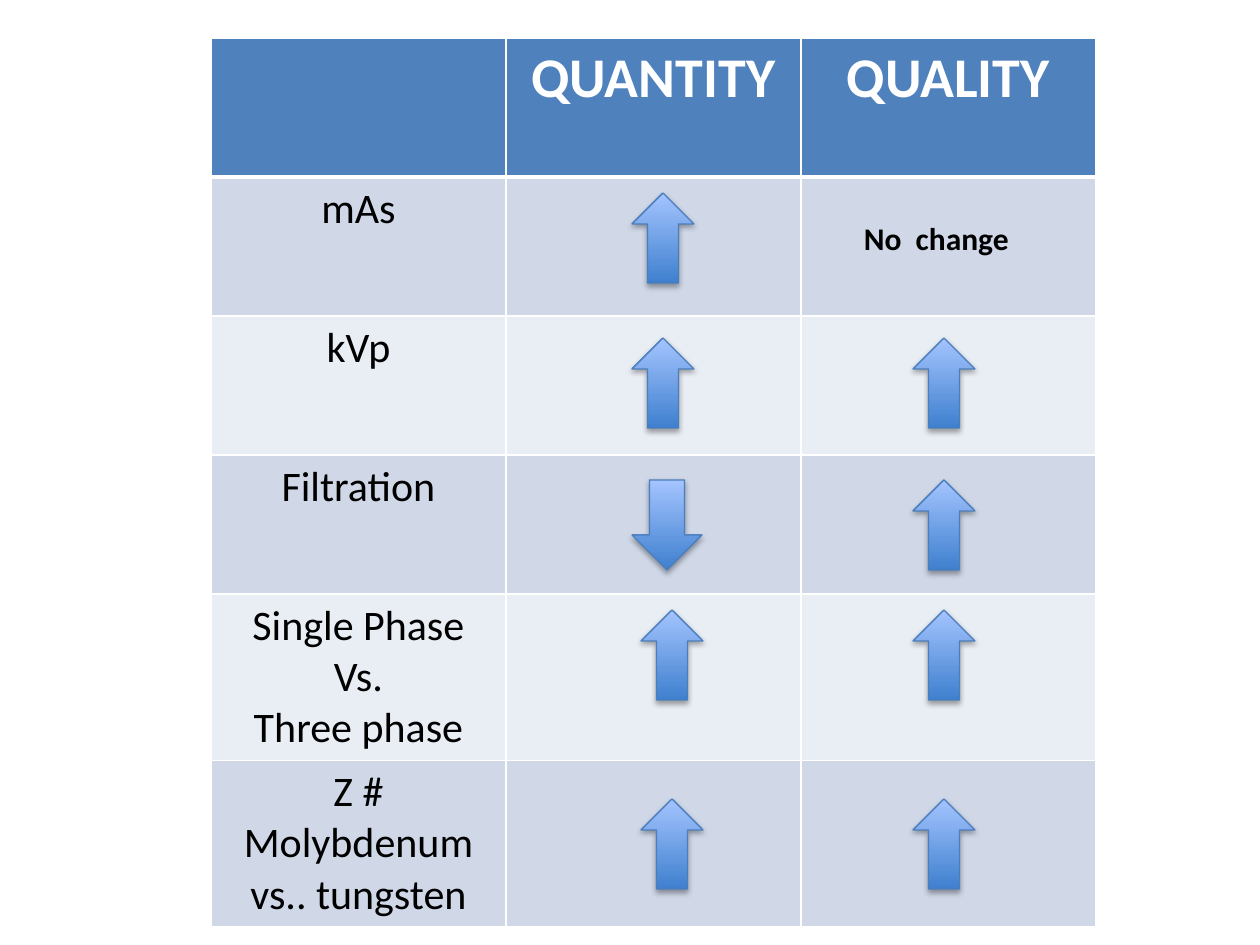
import pptx
import pptx.util
import pptx.dml.color
import pptx.enum.shapes
import pptx.enum.text
import pptx.oxml

RGBColor = pptx.dml.color.RGBColor
WHITE = RGBColor(0xFF, 0xFF, 0xFF)
BLACK = RGBColor(0x00, 0x00, 0x00)
HEADER_BLUE = RGBColor(0x4F, 0x81, 0xBD)
BAND_DARK = RGBColor(0xD0, 0xD8, 0xE8)
BAND_LIGHT = RGBColor(0xE9, 0xED, 0xF4)
ARROW_BOTTOM = RGBColor(0x3F, 0x80, 0xCE)
ARROW_TOP = RGBColor(0xA4, 0xC4, 0xFF)
ARROW_LINE = RGBColor(0x4B, 0x7E, 0xBC)
NS = 'xmlns:a="http://schemas.openxmlformats.org/drawingml/2006/main"'


def px(n):
    """Pixels at 126 to the inch, as EMU."""
    return pptx.util.Emu(round(n * 914400 / 126))


def set_borders(cell, widths):
    """White borders, widths in points by side: L, R, T, B."""
    tcPr = cell._tc.get_or_add_tcPr()
    for i, (side, width) in enumerate(widths.items()):
        tcPr.insert(i, pptx.oxml.parse_xml(
            f'<a:ln{side} {NS} w="{pptx.util.Pt(width)}"><a:solidFill>'
            f'<a:srgbClr val="{WHITE}"/></a:solidFill></a:ln{side}>'))


prs = pptx.Presentation()
prs.slide_width, prs.slide_height = px(1260), px(945)
s = prs.slides.add_slide(prs.slide_layouts[6])

# Table
rows = [
    ["", "QUANTITY", "QUALITY"],
    ["mAs", "", "No  change"],
    ["kVp", "", ""],
    ["Filtration", "", ""],
    ["Single Phase\nVs.\nThree phase", "", ""],
    ["Z #\nMolybdenum vs.. tungsten", "", ""],
]
table = s.shapes.add_table(6, 3, px(211), px(38), px(3 * 295), px(6 * 139)).table
for column in table.columns:
    column.width = px(295)
for i, texts in enumerate(rows):
    table.rows[i].height = px(139)
    for j, text in enumerate(texts):
        cell = table.cell(i, j)
        cell.fill.solid()
        cell.fill.fore_color.rgb = HEADER_BLUE if i == 0 else (BAND_LIGHT, BAND_DARK)[i % 2]
        set_borders(cell, {"L": 1, "R": 1, "T": 3 if i == 1 else 1, "B": 3 if i == 0 else 1})
        if not text:
            continue
        note = i > 0 and j == 2
        if note:
            cell.margin_left, cell.margin_top = px(63), px(44)
        cell.text_frame.text = text
        for p in cell.text_frame.paragraphs:
            p.alignment = pptx.enum.text.PP_ALIGN.LEFT if note else pptx.enum.text.PP_ALIGN.CENTER
            for r in p.runs:
                r.font.name = "Calibri"
                r.font.size = pptx.util.Pt(32 if i == 0 else 18 if note else 24)
                r.font.bold = i == 0 or note
                r.font.color.rgb = WHITE if i == 0 else BLACK

# Arrows: left, top, width
UP = pptx.enum.shapes.MSO_SHAPE.UP_ARROW
DOWN = pptx.enum.shapes.MSO_SHAPE.DOWN_ARROW
arrows = [(UP, 632, 193, 62), (UP, 632, 338, 62), (DOWN, 632, 480, 70),
          (UP, 641, 610, 62), (UP, 641, 799, 62)]
arrows += [(UP, 913, top, 62) for top in (338, 480, 610, 799)]
for kind, left, top, width in arrows:
    sp = s.shapes.add_shape(kind, px(left), px(top), px(width), px(90))
    sp.fill.gradient()
    sp.fill.gradient_angle = 90
    for stop, color, position in zip(sp.fill.gradient_stops, (ARROW_BOTTOM, ARROW_TOP), (0, 1)):
        stop.color.rgb = color
        stop.position = position
    sp.line.color.rgb = ARROW_LINE
    sp.line.width = pptx.util.Pt(0.75)
    sp.shadow.inherit = False
    sp._element.spPr.find(pptx.oxml.ns.qn("a:effectLst")).append(pptx.oxml.parse_xml(
        f'<a:outerShdw {NS} blurRad="40000" dist="23000" dir="5400000" rotWithShape="0">'
        f'<a:srgbClr val="{BLACK}"><a:alpha val="35000"/></a:srgbClr></a:outerShdw>'))

prs.save("out.pptx")
